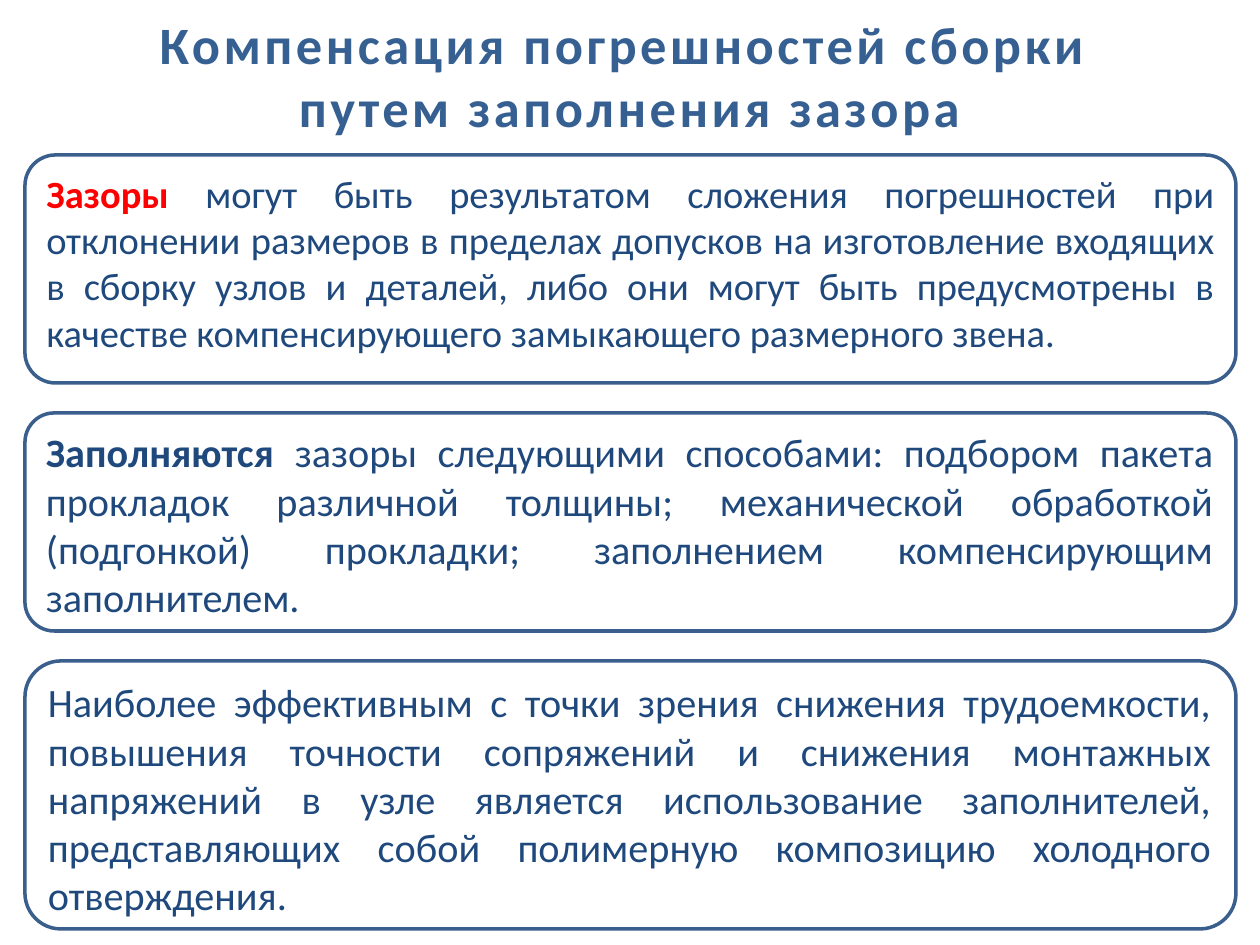
from pptx import Presentation
from pptx.dml.color import RGBColor
from pptx.enum.shapes import MSO_SHAPE
from pptx.enum.text import MSO_ANCHOR, MSO_AUTO_SIZE, PP_ALIGN
from pptx.util import Pt

PX = 914400 // 126
FONT = "Calibri"
TITLE_BLUE = RGBColor(0x37, 0x60, 0x92)
TEXT_BLUE = RGBColor(0x1F, 0x49, 0x7D)
LINE_BLUE = RGBColor(0x3A, 0x5F, 0x8C)
RED = RGBColor(0xFF, 0x00, 0x00)

TITLE_LINES = ["Компенсация погрешностей сборки ", "путем заполнения зазора"]

# Each box: height, font size, lead word, lead colour, remaining text
BOXES = [
    (228, 22, "Зазоры", RED,
     " могут быть результатом сложения погрешностей при отклонении размеров "
     "в пределах допусков на изготовление входящих в сборку узлов и деталей, "
     "либо они могут быть предусмотрены в качестве компенсирующего замыкающего "
     "размерного звена."),
    (218, 23, "Заполняются", TEXT_BLUE,
     " зазоры следующими способами: подбором пакета прокладок различной толщины; "
     "механической обработкой (подгонкой) прокладки; заполнением компенсирующим "
     "заполнителем."),
    (268, 23, "", TEXT_BLUE,
     "Наиболее эффективным с точки зрения снижения трудоемкости, повышения "
     "точности сопряжений и снижения монтажных напряжений в узле является "
     "использование заполнителей, представляющих собой полимерную композицию "
     "холодного отверждения."),
]
BOX_LEFT, BOX_TOP, BOX_WIDTH, BOX_GAP = 25, 155, 1211, 30


def place(shape, left, top, width, height):
    shape.left, shape.top = left * PX, top * PX
    shape.width, shape.height = width * PX, height * PX


def add_text(paragraph, text, *, size, color, bold=False, spacing=None):
    run = paragraph.add_run()
    run.text = text
    run.font.name = FONT
    run.font.size = Pt(size)
    run.font.bold = bold
    run.font.color.rgb = color
    if spacing is not None:
        run.font._element.set("spc", str(spacing * 100))


def add_title(slide):
    title = slide.shapes.title
    place(title, 0, 6, 1260, 139)
    frame = title.text_frame
    frame.word_wrap = True
    frame.auto_size = MSO_AUTO_SIZE.NONE
    frame.vertical_anchor = MSO_ANCHOR.MIDDLE
    for index, line in enumerate(TITLE_LINES):
        paragraph = frame.add_paragraph() if index else frame.paragraphs[0]
        paragraph.alignment = PP_ALIGN.CENTER
        paragraph.space_before = Pt(0)
        add_text(paragraph, line, size=30, color=TITLE_BLUE, bold=True, spacing=2)


def add_box(slide, top, height, size, lead, lead_color, body):
    box = slide.shapes.add_shape(MSO_SHAPE.ROUNDED_RECTANGLE, 0, 0, 0, 0)
    place(box, BOX_LEFT, top, BOX_WIDTH, height)
    box.adjustments[0] = 0.134
    box.shadow.inherit = False
    box.fill.background()
    box.line.color.rgb = LINE_BLUE
    box.line.width = Pt(2)
    frame = box.text_frame
    frame.word_wrap = True
    frame.vertical_anchor = MSO_ANCHOR.TOP
    paragraph = frame.paragraphs[0]
    paragraph.alignment = PP_ALIGN.JUSTIFY
    if lead:
        add_text(paragraph, lead, size=size, color=lead_color, bold=True)
    add_text(paragraph, body, size=size, color=TEXT_BLUE)


def main():
    presentation = Presentation()
    presentation.slide_width = 1260 * PX
    presentation.slide_height = 945 * PX
    slide = presentation.slides.add_slide(presentation.slide_layouts[5])
    add_title(slide)
    top = BOX_TOP
    for height, *content in BOXES:
        add_box(slide, top, height, *content)
        top += height + BOX_GAP
    presentation.save("out.pptx")


if __name__ == "__main__":
    main()
